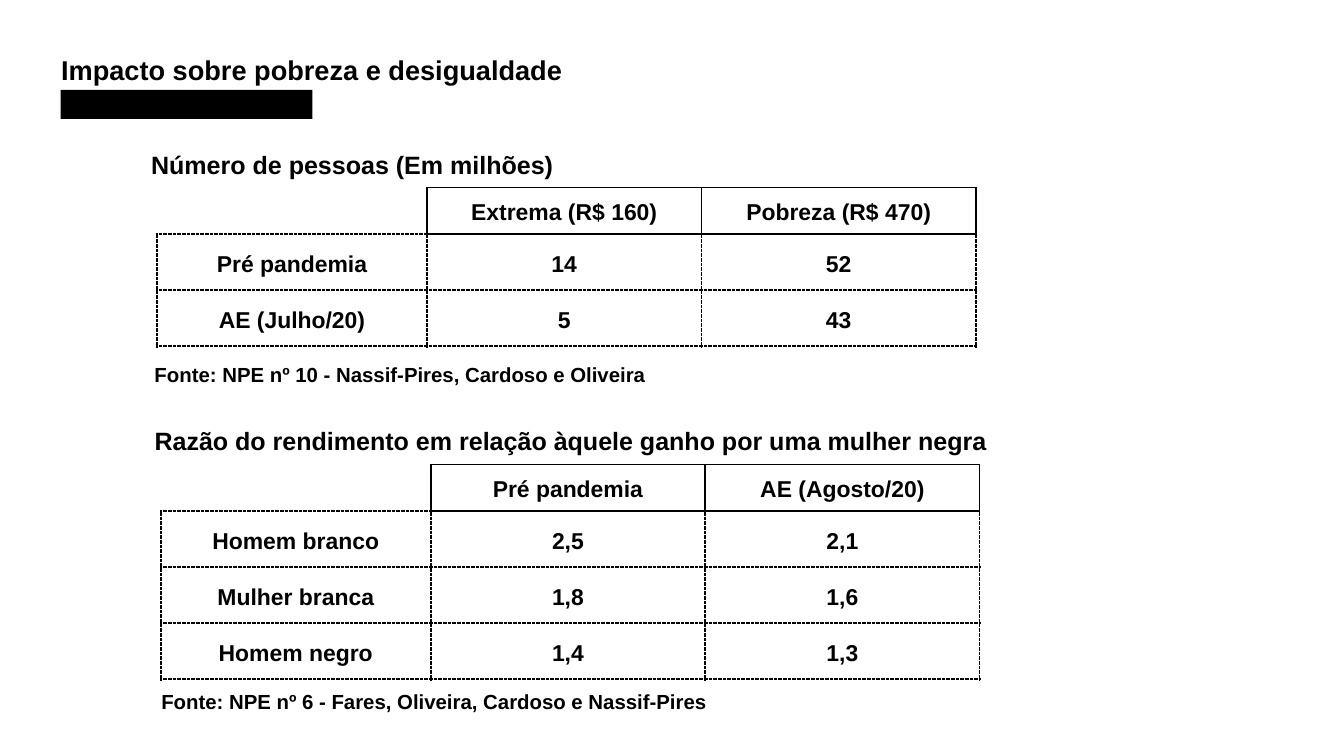
"""Build a slide with two tables on poverty and income inequality."""
from lxml import etree
from pptx import Presentation
from pptx import util as u
from pptx.dml.color import RGBColor
from pptx.enum import shapes, text
from pptx.oxml import ns

BLACK, WHITE = "000000", "FFFFFF"
SOLID, DOTTED, HIDDEN = (BLACK, "solid"), (BLACK, "dot"), (WHITE, "solid")


def write(para, words, size):
    """Add one bold black run to a paragraph."""
    span = para.add_run()
    span.text = words
    span.font.name = "Arial"
    span.font.size = u.Pt(size)
    span.font.bold = True
    span.font.color.rgb = RGBColor.from_string(BLACK)


def draw_borders(cell, borders):
    """Set the left, right, top and bottom borders of a cell."""
    props = cell._tc.get_or_add_tcPr()
    for side, (color, dash) in zip("LRTB", borders):
        line = etree.SubElement(props, ns.qn(f"a:ln{side}"), w=str(u.Pt(2.25)))
        fill = etree.SubElement(line, ns.qn("a:solidFill"))
        etree.SubElement(fill, ns.qn("a:srgbClr"), val=color)
        etree.SubElement(line, ns.qn("a:prstDash"), val=dash)


deck = Presentation()
deck.slide_width, deck.slide_height = u.Pt(1583.3), u.Pt(890.6)
page = deck.slides.add_slide(deck.slide_layouts[6])

bar = page.shapes.add_shape(shapes.MSO_SHAPE.RECTANGLE,
                            u.Pt(71.3), u.Pt(106), u.Pt(296.6), u.Pt(34))
bar.shadow.inherit = False
bar.fill.solid()
bar.fill.fore_color.rgb = RGBColor.from_string(BLACK)
bar.line.fill.background()

captions = [
    ("Impacto sobre pobreza e desigualdade", 72, 61.2, 875, 40, 32),
    ("Número de pessoas (Em milhões)", 178, 175, 875, 37, 29.5),
    ("Fonte: NPE nº 10 - Nassif-Pires, Cardoso e Oliveira", 182, 425.5, 875, 30, 24),
    ("Razão do rendimento em relação àquele ganho por uma mulher negra",
     182, 499.7, 1043, 37, 29.5),
    ("Fonte: NPE nº 6 - Fares, Oliveira, Cardoso e Nassif-Pires", 190, 810.7, 875, 30, 24),
]
for words, left, top, width, height, size in captions:
    box = page.shapes.add_textbox(u.Pt(left), u.Pt(top), u.Pt(width), u.Pt(height))
    frame = box.text_frame
    frame.word_wrap = True
    frame.margin_left = frame.margin_right = frame.margin_bottom = 0
    frame.margin_top = u.Pt(1)
    para = frame.paragraphs[0]
    para.line_spacing = 1.01
    write(para, words, size)

column_widths = [318, 323.3, 323.3]
tables = [
    (185, 221, [
        ["", "Extrema (R$ 160)", "Pobreza (R$ 470)"],
        ["Pré pandemia", "14", "52"],
        ["AE (Julho/20)", "5", "43"],
    ]),
    (189.4, 547.2, [
        ["", "Pré pandemia", "AE (Agosto/20)"],
        ["Homem branco", "2,5", "2,1"],
        ["Mulher branca", "1,8", "1,6"],
        ["Homem negro", "1,4", "1,3"],
    ]),
]
for left, top, rows in tables:
    heights = [55] + [66] * (len(rows) - 1)
    table = page.shapes.add_table(len(rows), 3, u.Pt(left), u.Pt(top),
                                  u.Pt(sum(column_widths)), u.Pt(sum(heights))).table
    table.first_row = table.horz_banding = False
    for column, width in zip(table.columns, column_widths):
        column.width = u.Pt(width)
    for r, values in enumerate(rows):
        table.rows[r].height = u.Pt(heights[r])
        for c, value in enumerate(values):
            cell = table.cell(r, c)
            if r == 0:
                borders = [SOLID] * 4 if c else [HIDDEN, SOLID, HIDDEN, DOTTED]
            else:
                borders = [DOTTED, DOTTED, SOLID if r == 1 and c else DOTTED, DOTTED]
            draw_borders(cell, borders)
            cell.fill.background()
            cell.vertical_anchor = text.MSO_ANCHOR.MIDDLE
            cell.margin_left = cell.margin_right = u.Pt(5)
            cell.margin_top = cell.margin_bottom = u.Pt(5)
            para = cell.text_frame.paragraphs[0]
            para.alignment = text.PP_ALIGN.CENTER
            para.line_spacing = 1.15
            if (r, c) == (1, 0):
                para.space_before = u.Pt(12)
            if value:
                write(para, value, 27)

deck.save("out.pptx")
